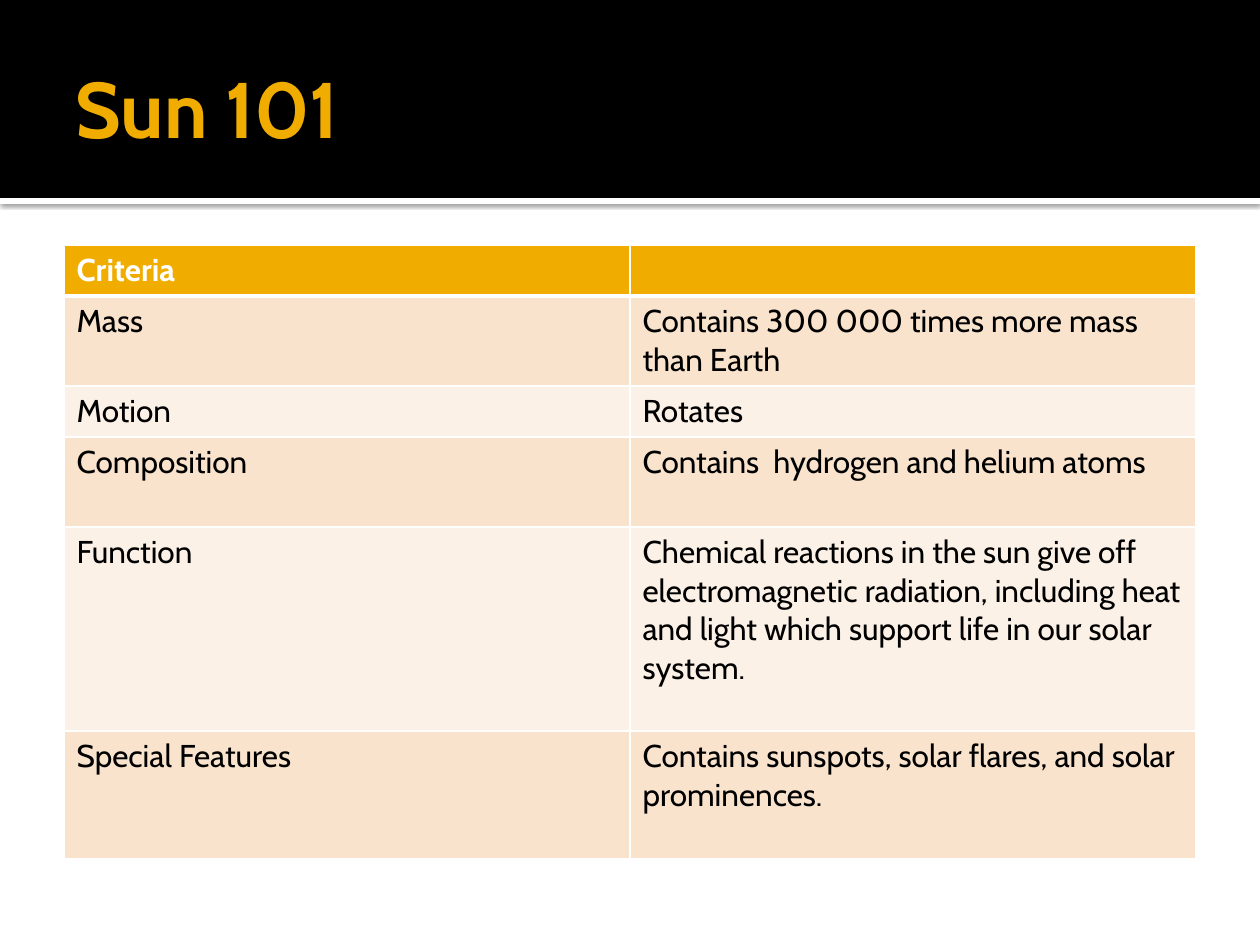
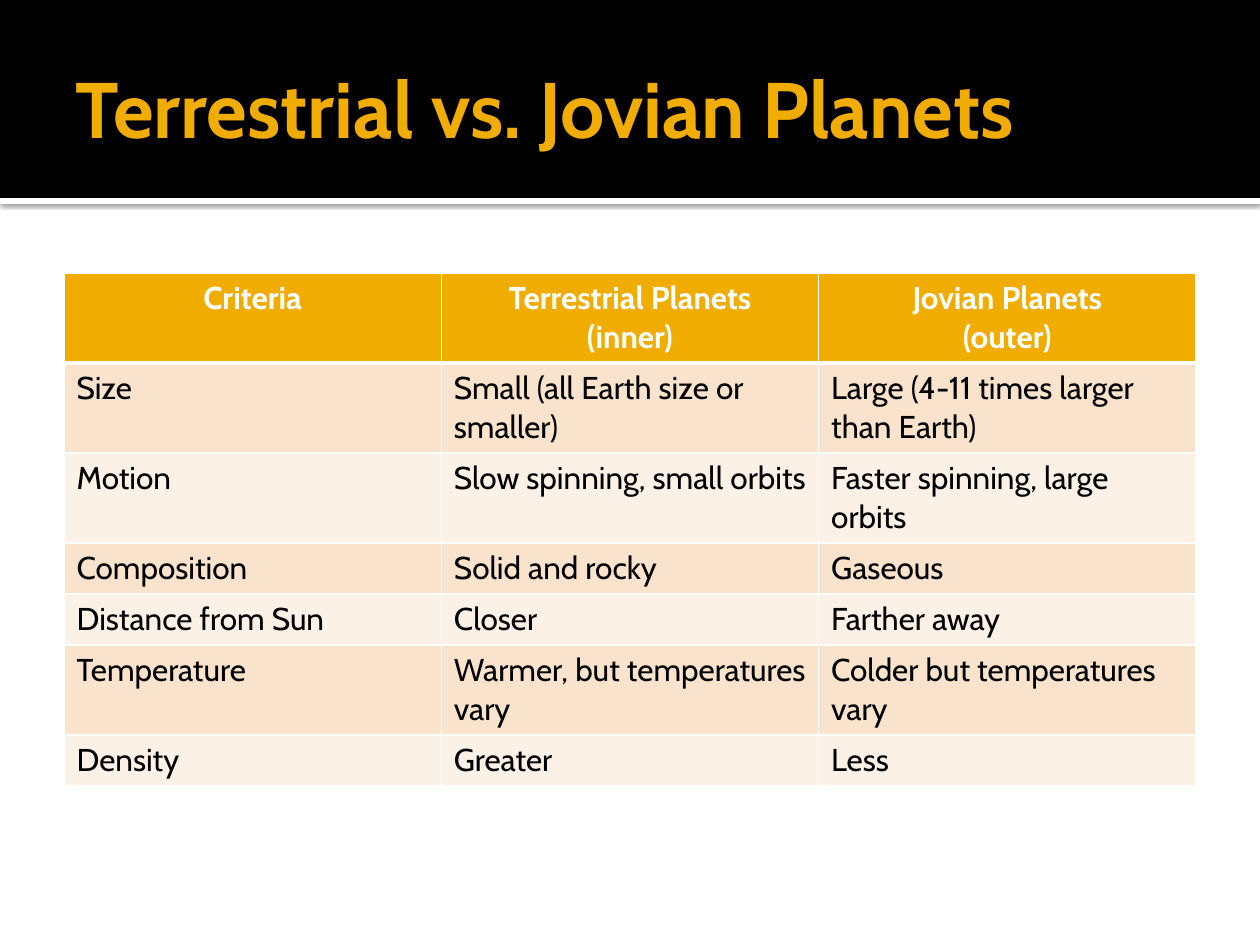
from lxml.etree import SubElement
from pptx import Presentation
from pptx.dml.color import RGBColor
from pptx.enum.shapes import MSO_SHAPE as Shape
from pptx.enum.text import MSO_ANCHOR as Anchor, PP_ALIGN as Align
from pptx.oxml.ns import qn
from pptx.util import Emu, Pt

# Shared look
EMU_PER_PX = 914400 / 126
PAGE_WIDTH, PAGE_HEIGHT = 1260, 945
MARGIN, CONTENT_WIDTH = 64, 1132
BAND_HEIGHT, STRIP_HEIGHT = 198, 6
FONT = "Cabin"
GOLD, BLACK, WHITE = "F0AD00", "000000", "FFFFFF"
ROW_FILLS = ("F9E3CC", "FCF1E7")

# Row heights by the number of text lines
ONE_LINE, TWO_LINES, THREE_LINES, FIVE_LINES = 51, 90, 128, 204

SUN_ROWS = [
    ("Criteria", ""),
    ("Mass", "Contains 300 000 times more mass than Earth"),
    ("Motion", "Rotates"),
    ("Composition", "Contains  hydrogen and helium atoms"),
    ("Function", "Chemical reactions in the sun give off electromagnetic radiation, "
                 "including heat and light which support life in our solar system."),
    ("Special Features", "Contains sunspots, solar flares, and solar prominences."),
]
SUN_HEIGHTS = [ONE_LINE, TWO_LINES, ONE_LINE, TWO_LINES, FIVE_LINES, THREE_LINES]

PLANET_ROWS = [
    ("Criteria", "Terrestrial Planets\n(inner)", "Jovian Planets\n(outer)"),
    ("Size", "Small (all Earth size or smaller)", "Large (4-11 times larger than Earth)"),
    ("Motion", "Slow spinning, small orbits", "Faster spinning, large orbits"),
    ("Composition", "Solid and rocky", "Gaseous"),
    ("Distance from Sun", "Closer", "Farther away"),
    ("Temperature", "Warmer, but temperatures vary", "Colder but temperatures vary"),
    ("Density", "Greater", "Less"),
]
PLANET_HEIGHTS = [TWO_LINES, TWO_LINES, TWO_LINES, ONE_LINE, ONE_LINE, TWO_LINES, ONE_LINE]


def px(length):
    return Emu(round(length * EMU_PER_PX))


def color(code):
    return RGBColor.from_string(code)


def write(frame, text, size=18, fill=BLACK, bold=False, align=Align.LEFT):
    """Fill a text frame, one paragraph per line of text."""
    for index, line in enumerate(text.split("\n")):
        para = frame.add_paragraph() if index else frame.paragraphs[0]
        para.alignment = align
        span = para.add_run()
        span.text = line
        span.font.name = FONT
        span.font.size = Pt(size)
        span.font.bold = bold
        span.font.color.rgb = color(fill)


def add_bar(page, top, height, fill):
    bar = page.shapes.add_shape(Shape.RECTANGLE, 0, px(top), px(PAGE_WIDTH), px(height))
    bar.fill.solid()
    bar.fill.fore_color.rgb = color(fill)
    bar.line.fill.background()
    bar.shadow.inherit = False
    return bar


def drop_shadow(shape, blur, distance, opacity):
    """Cast a black shadow straight down."""
    effects = shape._element.spPr.find(qn("a:effectLst"))
    shadow = SubElement(effects, qn("a:outerShdw"), blurRad=str(Pt(blur)),
                        dist=str(Pt(distance)), dir="5400000", algn="t", rotWithShape="0")
    ink = SubElement(shadow, qn("a:srgbClr"), val=BLACK)
    SubElement(ink, qn("a:alpha"), val=str(opacity * 1000))


def add_title(page, text):
    box = page.shapes.add_textbox(px(63), px(21), px(1134), px(173))
    frame = box.text_frame
    frame.word_wrap = True
    frame.vertical_anchor = Anchor.MIDDLE
    frame.margin_right = frame.margin_top = frame.margin_bottom = px(6)
    write(frame, text, size=45, fill=GOLD, bold=True)


def add_page(deck, title):
    """Start a page with the black title band and its shaded white edge."""
    page = deck.slides.add_slide(deck.slide_layouts[6])
    strip = add_bar(page, BAND_HEIGHT, STRIP_HEIGHT, WHITE)
    drop_shadow(strip, blur=2.5, distance=0.8, opacity=60)
    add_bar(page, 0, BAND_HEIGHT, BLACK)
    add_title(page, title)
    return page


def set_borders(cell, top=1, bottom=1):
    props = cell._tc.get_or_add_tcPr()
    widths = {"a:lnL": 1, "a:lnR": 1, "a:lnT": top, "a:lnB": bottom}
    for tag, width in widths.items():
        line = SubElement(props, qn(tag), w=str(Pt(width)))
        SubElement(SubElement(line, qn("a:solidFill")), qn("a:srgbClr"), val=WHITE)


def add_grid(page, rows, heights, top, header_align=Align.LEFT):
    """Add a table with a gold header, equal columns and banded rows."""
    columns = len(rows[0])
    table = page.shapes.add_table(len(rows), columns, px(MARGIN), px(top),
                                  px(CONTENT_WIDTH), px(sum(heights))).table
    for column in table.columns:
        column.width = px(CONTENT_WIDTH / columns)
    for r, (texts, height) in enumerate(zip(rows, heights)):
        table.rows[r].height = px(height)
        header = r == 0
        for c, text in enumerate(texts):
            cell = table.cell(r, c)
            set_borders(cell, top=3 if r == 1 else 1, bottom=3 if header else 1)
            cell.fill.solid()
            cell.fill.fore_color.rgb = color(GOLD if header else ROW_FILLS[(r - 1) % 2])
            write(cell.text_frame, text, fill=WHITE if header else BLACK, bold=header,
                  align=header_align if header else Align.LEFT)


def main():
    deck = Presentation()
    deck.slide_width, deck.slide_height = px(PAGE_WIDTH), px(PAGE_HEIGHT)

    # Facts about the sun
    page = add_page(deck, "Sun 101")
    add_grid(page, SUN_ROWS, SUN_HEIGHTS, top=245)

    # Inner and outer planets compared
    page = add_page(deck, "Terrestrial vs. Jovian Planets")
    add_grid(page, PLANET_ROWS, PLANET_HEIGHTS, top=273, header_align=Align.CENTER)

    deck.save("out.pptx")


if __name__ == "__main__":
    main()
